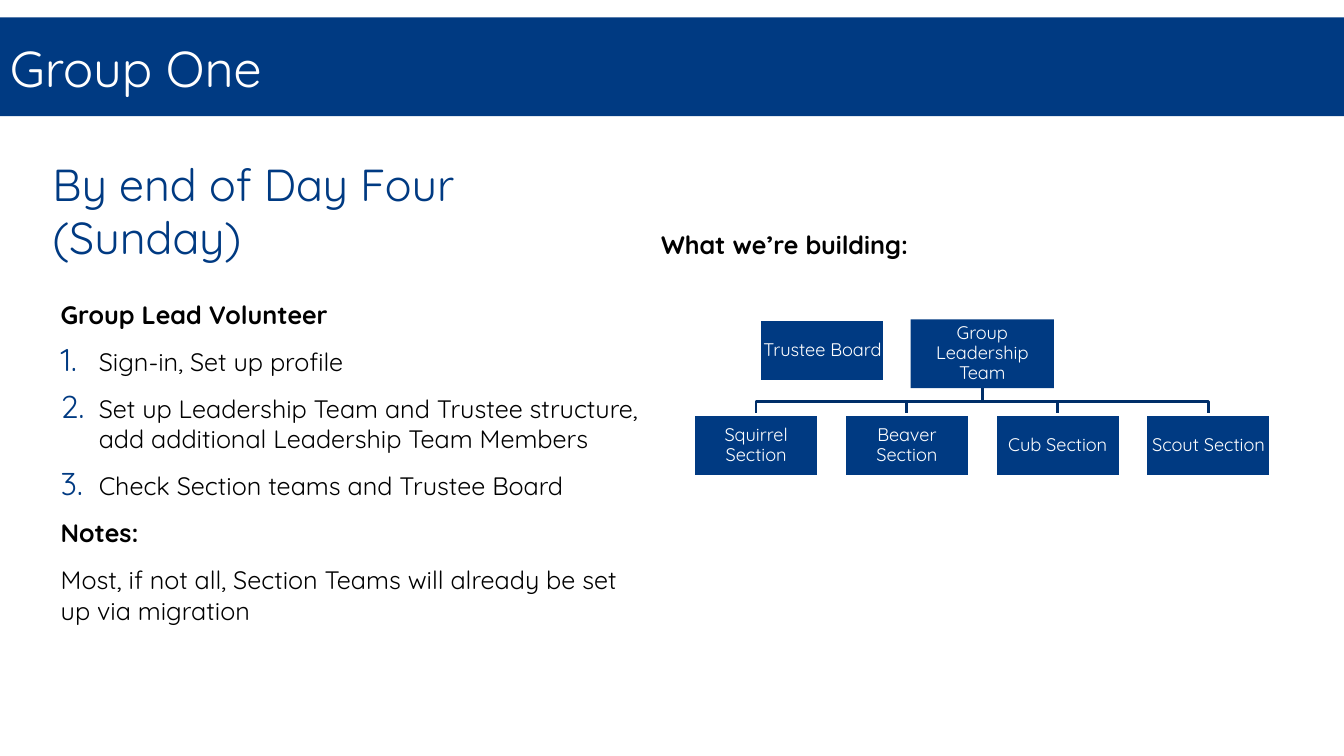
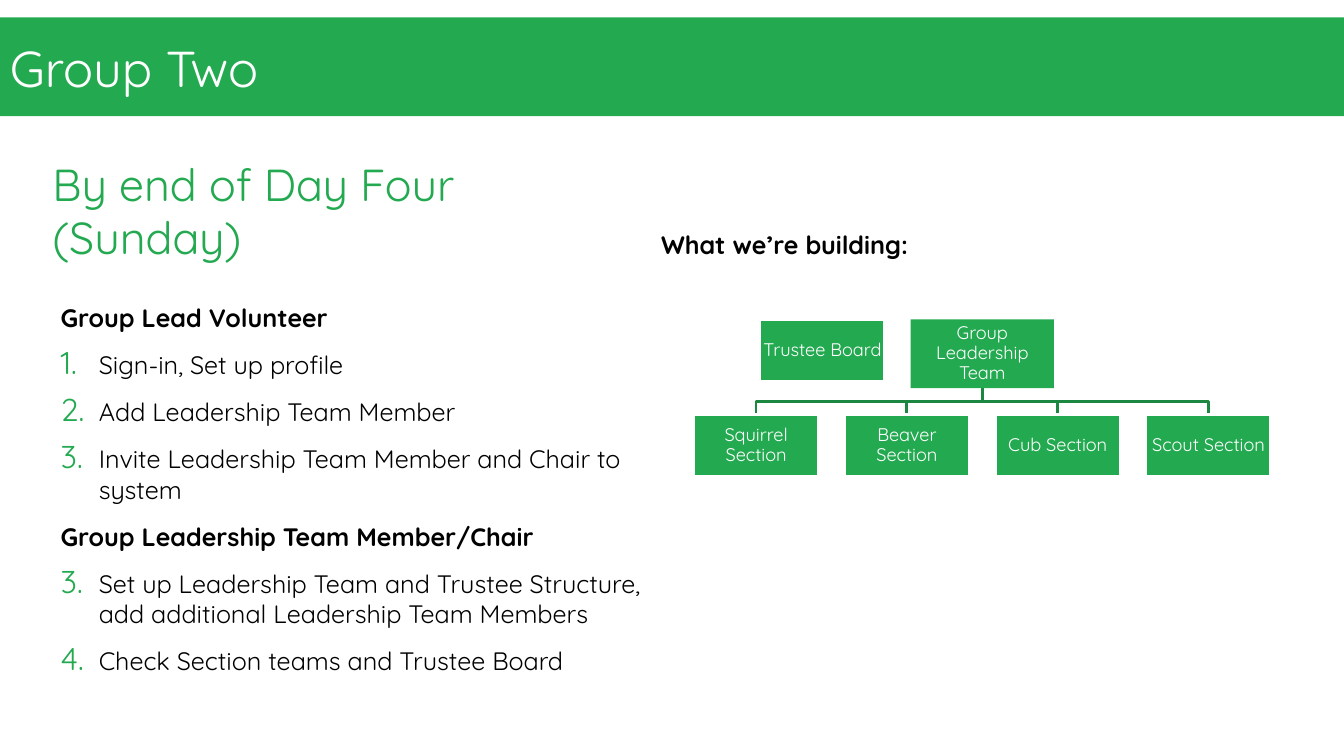
from lxml.etree import SubElement
from pptx import Presentation
from pptx.dml.color import RGBColor
from pptx.enum.shapes import MSO_SHAPE
from pptx.enum.text import MSO_ANCHOR, MSO_AUTO_SIZE, PP_ALIGN
from pptx.oxml.ns import qn
from pptx.util import Cm, Pt

# Shared style
FONT = "Quicksand"
BLACK = RGBColor(0x00, 0x00, 0x00)
WHITE = RGBColor(0xFF, 0xFF, 0xFF)
BLUE = RGBColor(0x00, 0x3A, 0x82)
DARK_BLUE = RGBColor(0x00, 0x2E, 0x68)
GREEN = RGBColor(0x23, 0xA9, 0x50)
DARK_GREEN = RGBColor(0x1C, 0x87, 0x40)
SLIDE_WIDTH, SLIDE_HEIGHT = Cm(33.87), Cm(19.05)
LEFT_MARGIN, COLUMN_WIDTH = Cm(1.32), Cm(15.06)

# Organisation chart grid
SECTIONS = ["Squirrel Section", "Beaver Section", "Cub Section", "Scout Section"]
BOX_WIDTH, BOX_HEIGHT = Cm(3.15), Cm(1.57)
SECTION_LEFT, SECTION_TOP, SECTION_PITCH = Cm(17.48), Cm(10.44), Cm(3.8)
TEAM_WIDTH, TEAM_HEIGHT, TEAM_TOP = Cm(3.61), Cm(1.73), Cm(8.05)
TRUSTEE_LEFT = Cm(19.15)

# Content: each list part is (kind, text), where a kind is a heading, plain
# text or the number at which the numbered list starts
HEADING, PLAIN = "heading", "plain"
GROUPS = [
    ("Group One", BLUE, DARK_BLUE, Cm(7.44), Cm(8.48), [
        (HEADING, "Group Lead Volunteer"),
        (1, "Sign-in, Set up profile"),
        (1, "Set up Leadership Team and Trustee structure, "
            "add additional Leadership Team Members"),
        (1, "Check Section teams and Trustee Board"),
        (HEADING, "Notes:"),
        (PLAIN, "Most, if not all, Section Teams will already be set up via migration"),
    ]),
    ("Group Two", GREEN, DARK_GREEN, Cm(7.52), Cm(9.68), [
        (HEADING, "Group Lead Volunteer"),
        (1, "Sign-in, Set up profile"),
        (1, "Add Leadership Team Member"),
        (1, "Invite Leadership Team Member and Chair to system"),
        (HEADING, "Group Leadership Team Member/Chair"),
        (3, "Set up Leadership Team and Trustee Structure, "
            "add additional Leadership Team Members"),
        (3, "Check Section teams and Trustee Board"),
    ]),
]


def place(shape, left, top, width, height):
    shape.left, shape.top, shape.width, shape.height = left, top, width, height


def set_frame(frame, inset_x, inset_y, anchor=MSO_ANCHOR.TOP):
    frame.word_wrap = True
    frame.auto_size = MSO_AUTO_SIZE.NONE
    frame.vertical_anchor = anchor
    frame.margin_left = frame.margin_right = inset_x
    frame.margin_top = frame.margin_bottom = inset_y


def style(para, size, color, bold=False, align=PP_ALIGN.LEFT):
    para.alignment = align
    para.font.name = FONT
    para.font.size = Pt(size)
    para.font.bold = bold
    para.font.color.rgb = color


def set_bullet(para, start, color):
    """Number the paragraph from start, or remove its bullet when start is None."""
    properties = para._p.get_or_add_pPr()
    if start is None:
        properties.set("marL", str(Cm(0.03)))
        properties.set("indent", "0")
        SubElement(properties, qn("a:buNone"))
        return
    properties.set("marL", str(Cm(0.99)))
    properties.set("indent", str(-Cm(0.96)))
    bullet_color = SubElement(properties, qn("a:buClr"))
    SubElement(bullet_color, qn("a:srgbClr"), val=str(color))
    SubElement(properties, qn("a:buSzPct"), val="125000")
    SubElement(properties, qn("a:buFont"), typeface=FONT)
    number = SubElement(properties, qn("a:buAutoNum"), type="arabicPeriod")
    if start > 1:
        number.set("startAt", str(start))


def fill_title_band(title, text, color):
    place(title, 0, Cm(0.44), SLIDE_WIDTH, Cm(2.49))
    title.fill.solid()
    title.fill.fore_color.rgb = color
    set_frame(title.text_frame, Cm(0.25), Cm(0.13), MSO_ANCHOR.MIDDLE)
    title.text_frame.text = text
    style(title.text_frame.paragraphs[0], 36, WHITE)


def fill_task_list(body, top, height, parts, color):
    place(body, LEFT_MARGIN, top, COLUMN_WIDTH, height)
    frame = body.text_frame
    set_frame(frame, Cm(0.18), Cm(0.1))
    for index, (kind, text) in enumerate(parts):
        para = frame.add_paragraph() if index else frame.paragraphs[0]
        para.text = text
        set_bullet(para, None if kind in (HEADING, PLAIN) else kind, color)
        para.space_before = Pt(6 if index else 0)
        para.space_after = Pt(6)
        style(para, 18, BLACK, bold=kind == HEADING)


def add_text(slide, text, bounds, insets, size, color, bold=False):
    box = slide.shapes.add_textbox(*bounds)
    set_frame(box.text_frame, *insets)
    box.text_frame.text = text
    for para in box.text_frame.paragraphs:
        style(para, size, color, bold)


def add_chart_box(slide, text, bounds, color, outlined=True):
    box = slide.shapes.add_shape(MSO_SHAPE.RECTANGLE, *bounds)
    box.shadow.inherit = False
    box.fill.solid()
    box.fill.fore_color.rgb = color
    if outlined:
        box.line.color.rgb = WHITE
        box.line.width = Pt(2)
    else:
        box.line.fill.background()
    set_frame(box.text_frame, Cm(0.02), Cm(0.02), MSO_ANCHOR.MIDDLE)
    box.text_frame.text = text
    para = box.text_frame.paragraphs[0]
    para.line_spacing = 0.9
    style(para, 13, WHITE, align=PP_ALIGN.CENTER)


def add_branch(slide, start_x, start_y, end_x, end_y, color):
    """Draw an open line going down, across and down again."""
    middle_y = (start_y + end_y) // 2
    builder = slide.shapes.build_freeform(start_x, start_y)
    builder.add_line_segments(
        [(start_x, middle_y), (end_x, middle_y), (end_x, end_y)], close=False)
    branch = builder.convert_to_shape()
    branch.shadow.inherit = False
    branch.fill.background()
    branch.line.color.rgb = color
    branch.line.width = Pt(2)


def add_organisation_chart(slide, color, line_color):
    lefts = [SECTION_LEFT + SECTION_PITCH * index for index in range(len(SECTIONS))]
    team_center = (lefts[0] + lefts[-1] + BOX_WIDTH) // 2
    for left in lefts:
        add_branch(slide, team_center, TEAM_TOP + TEAM_HEIGHT,
                   left + BOX_WIDTH // 2, SECTION_TOP, line_color)
    add_chart_box(slide, "Trustee Board",
                  (TRUSTEE_LEFT, TEAM_TOP, BOX_WIDTH, BOX_HEIGHT), color)
    add_chart_box(slide, "Group Leadership Team",
                  (team_center - TEAM_WIDTH // 2, TEAM_TOP, TEAM_WIDTH, TEAM_HEIGHT),
                  color, outlined=False)
    for left, section in zip(lefts, SECTIONS):
        add_chart_box(slide, section, (left, SECTION_TOP, BOX_WIDTH, BOX_HEIGHT), color)


def add_group_slide(deck, name, color, line_color, list_top, list_height, parts):
    slide = deck.slides.add_slide(deck.slide_layouts[1])
    fill_title_band(slide.shapes.title, name, color)
    add_text(slide, "By end of Day Four\n(Sunday)",
             (LEFT_MARGIN, Cm(3.94), COLUMN_WIDTH, Cm(2.74)), (0, 0), 32, color)
    fill_task_list(slide.placeholders[1], list_top, list_height, parts, color)
    add_organisation_chart(slide, color, line_color)
    add_text(slide, "What we’re building:",
             (Cm(16.38), Cm(5.64), Cm(7.87), Cm(1.02)), (Cm(0.28), Cm(0.13)),
             18, BLACK, bold=True)


def main():
    deck = Presentation()
    deck.slide_width, deck.slide_height = SLIDE_WIDTH, SLIDE_HEIGHT
    for group in GROUPS:
        add_group_slide(deck, *group)
    deck.save("out.pptx")


if __name__ == "__main__":
    main()
